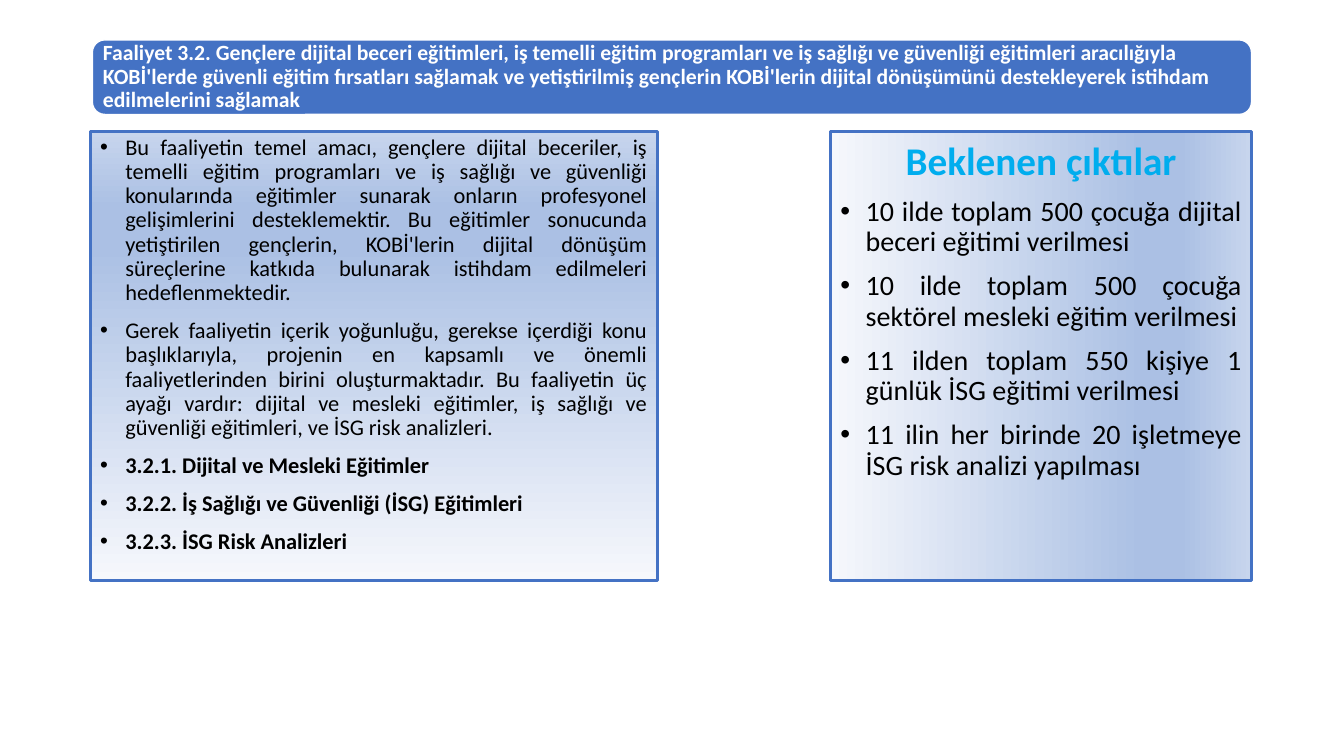
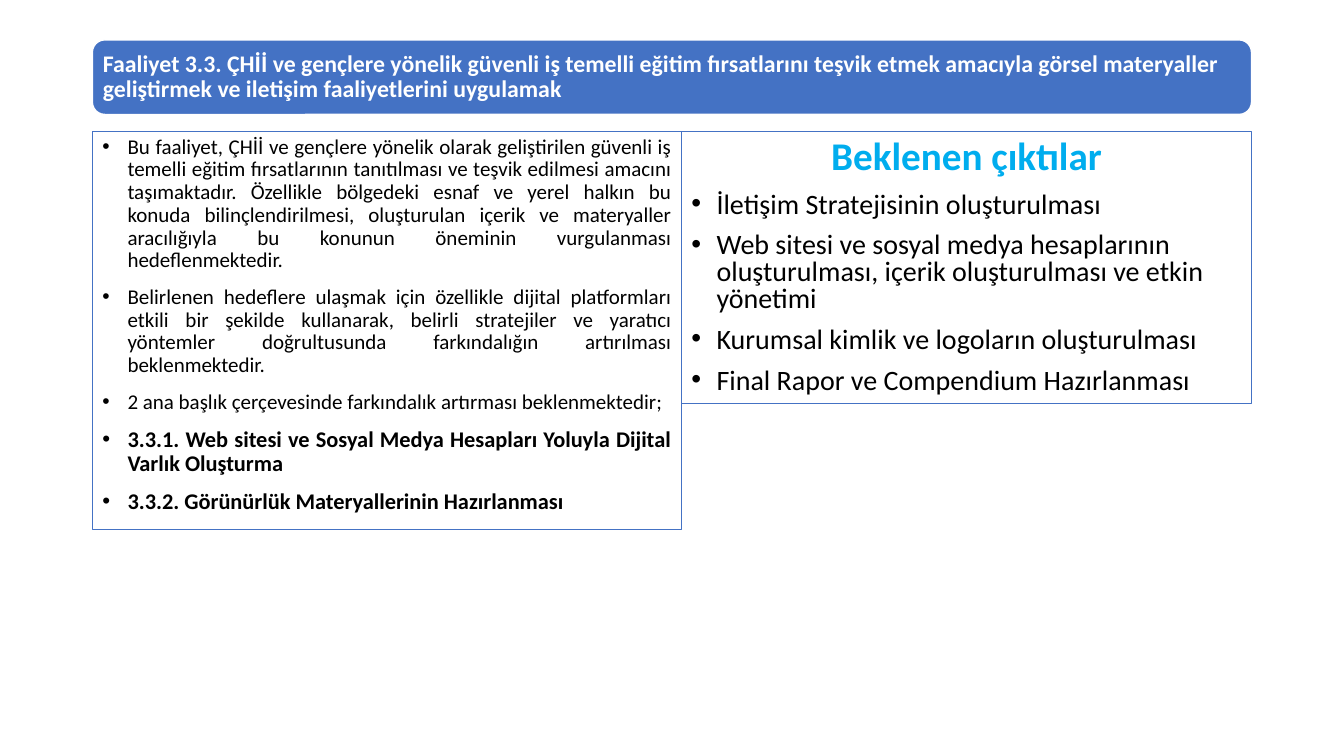
from copy import deepcopy
from dataclasses import dataclass

from lxml import etree
from pptx import Presentation
from pptx import util as u
from pptx.dml.color import RGBColor
from pptx.enum import shapes, text
from pptx.oxml import ns

PX = 9525


@dataclass(frozen=True)
class Theme:
    font: str = "Calibri"
    blue: str = "4472C4"
    white: str = "FFFFFF"
    black: str = "000000"
    cyan: str = "00ADEE"
    stops: tuple = ((0, "F6F8FC"), (0.74, "ABC0E4"), (0.83, "ABC0E4"), (1, "C7D5ED"))
    heading: int = 28
    output: int = 20
    indent: int = 24
    gap: int = 10


THEME = Theme()
BANNER = (88, 38, 1104, 71)
JUSTIFY, LEFT, CENTER = text.PP_ALIGN.JUSTIFY, text.PP_ALIGN.LEFT, text.PP_ALIGN.CENTER


def color(value):
    return RGBColor.from_string(value)


def emu(box):
    return [u.Emu(length * PX) for length in box]


def add_box(slide, kind, box, line_color, line_width):
    shape = slide.shapes.add_shape(kind, *emu(box))
    shape.shadow.inherit = False
    shape.line.color.rgb = color(line_color)
    shape.line.width = u.Pt(line_width)
    return shape


def fill_gradient(shape, angle):
    shape.fill.gradient()
    shape.fill.gradient_angle = angle
    stop_list = shape._element.spPr.find(".//" + ns.qn("a:gsLst"))
    while len(stop_list) < len(THEME.stops):
        stop_list.append(deepcopy(stop_list[0]))
    for stop, (position, value) in zip(shape.fill.gradient_stops, THEME.stops):
        stop.position = position
        stop.color.rgb = color(value)


def add_bullet(paragraph):
    properties = paragraph._p.get_or_add_pPr()
    properties.set("marL", str(THEME.indent * PX))
    properties.set("indent", str(-THEME.indent * PX))
    etree.SubElement(properties, ns.qn("a:buFont")).set("typeface", "Arial")
    etree.SubElement(properties, ns.qn("a:buChar")).set("char", "•")


def write(paragraph, words, size, value, bold=False, align=LEFT, spacing=0.9, before=0, bullet=False):
    paragraph.text = words
    if bullet:
        add_bullet(paragraph)
    paragraph.alignment = align
    paragraph.line_spacing = spacing
    paragraph.space_before = u.Pt(before)
    font = paragraph.font
    font.name, font.size, font.bold = THEME.font, u.Pt(size), bold
    font.color.rgb = color(value)


def add_banner(slide, box, words, size):
    banner = add_box(slide, shapes.MSO_SHAPE.ROUNDED_RECTANGLE, box, THEME.white, 1)
    banner.fill.solid()
    banner.fill.fore_color.rgb = color(THEME.blue)
    left, top, width, height = box
    title = slide.shapes.title
    title.left, title.top, title.width, title.height = emu((left + 3, top + 3, width - 6, height - 6))
    banner._element.addnext(title._element)
    frame = title.text_frame
    frame.word_wrap = True
    frame.auto_size = text.MSO_AUTO_SIZE.NONE
    frame.vertical_anchor = text.MSO_ANCHOR.MIDDLE
    frame.margin_left = frame.margin_right = frame.margin_top = frame.margin_bottom = u.Emu(7 * PX)
    write(frame.paragraphs[0], words, size, THEME.white, bold=True)


def add_panel(slide, box, line_width, angle):
    panel = add_box(slide, shapes.MSO_SHAPE.RECTANGLE, box, THEME.blue, line_width)
    if angle is None:
        panel.fill.background()
    else:
        fill_gradient(panel, angle)
    frame = panel.text_frame
    frame.word_wrap = True
    frame.vertical_anchor = text.MSO_ANCHOR.TOP
    return frame


def add_description(slide, box, line_width, angle, size, sentences, subheads):
    frame = add_panel(slide, box, line_width, angle)
    entries = [(words, size, False) for words in sentences] + [(words, 16, True) for words in subheads]
    for index, (words, points, bold) in enumerate(entries):
        paragraph = frame.add_paragraph() if index else frame.paragraphs[0]
        write(paragraph, words, points, THEME.black, bold, JUSTIFY,
              before=THEME.gap if index else 0, bullet=True)


def add_outputs(slide, box, line_width, angle, align, heading_spacing, spacing, outputs):
    frame = add_panel(slide, box, line_width, angle)
    write(frame.paragraphs[0], "Beklenen çıktılar", THEME.heading, THEME.cyan, True, CENTER, heading_spacing)
    for words in outputs:
        write(frame.add_paragraph(), words, THEME.output, THEME.black, False, align, spacing,
              THEME.gap, bullet=True)


def add_activity(presentation, title, title_size, line_width, description, outputs):
    slide = presentation.slides.add_slide(presentation.slide_layouts[5])
    add_banner(slide, BANNER, title, title_size)
    add_description(slide, line_width=line_width, **description)
    add_outputs(slide, line_width=line_width, **outputs)


ACTIVITIES = (
    dict(
        title="Faaliyet 3.2. Gençlere dijital beceri eğitimleri, iş temelli eğitim programları ve iş sağlığı ve "
              "güvenliği eğitimleri aracılığıyla KOBİ'lerde güvenli eğitim fırsatları sağlamak ve yetiştirilmiş "
              "gençlerin KOBİ'lerin dijital dönüşümünü destekleyerek istihdam edilmelerini sağlamak",
        title_size=15.5,
        line_width=2,
        description=dict(
            box=(86, 125, 540, 428), angle=90, size=16,
            sentences=(
                "Bu faaliyetin temel amacı, gençlere dijital beceriler, iş temelli eğitim programları ve iş sağlığı "
                "ve güvenliği konularında eğitimler sunarak onların profesyonel gelişimlerini desteklemektir. Bu "
                "eğitimler sonucunda yetiştirilen gençlerin, KOBİ'lerin dijital dönüşüm süreçlerine katkıda "
                "bulunarak istihdam edilmeleri hedeflenmektedir.",
                "Gerek faaliyetin içerik yoğunluğu, gerekse içerdiği konu başlıklarıyla, projenin en kapsamlı ve "
                "önemli faaliyetlerinden birini oluşturmaktadır. Bu faaliyetin üç ayağı vardır: dijital ve mesleki "
                "eğitimler, iş sağlığı ve güvenliği eğitimleri, ve İSG risk analizleri.",
            ),
            subheads=(
                "3.2.1. Dijital ve Mesleki Eğitimler",
                "3.2.2. İş Sağlığı ve Güvenliği (İSG) Eğitimleri",
                "3.2.3. İSG Risk Analizleri",
            ),
        ),
        outputs=dict(
            box=(791, 125, 401, 428), angle=0, align=JUSTIFY, heading_spacing=1.0, spacing=0.9,
            outputs=(
                "10 ilde toplam 500 çocuğa dijital beceri eğitimi verilmesi",
                "10 ilde toplam 500 çocuğa sektörel mesleki eğitim verilmesi",
                "11 ilden toplam 550 kişiye 1 günlük İSG eğitimi verilmesi",
                "11 ilin her birinde 20 işletmeye İSG risk analizi yapılması",
            ),
        ),
    ),
    dict(
        title="Faaliyet 3.3. ÇHİİ ve gençlere yönelik güvenli iş temelli eğitim fırsatlarını teşvik etmek amacıyla "
              "görsel materyaller geliştirmek ve iletişim faaliyetlerini uygulamak",
        title_size=17,
        line_width=0.75,
        description=dict(
            box=(88, 125, 561, 379), angle=None, size=15,
            sentences=(
                "Bu faaliyet, ÇHİİ ve gençlere yönelik olarak geliştirilen güvenli iş temelli eğitim fırsatlarının "
                "tanıtılması ve teşvik edilmesi amacını taşımaktadır. Özellikle bölgedeki esnaf ve yerel halkın bu "
                "konuda bilinçlendirilmesi, oluşturulan içerik ve materyaller aracılığıyla bu konunun öneminin "
                "vurgulanması hedeflenmektedir.",
                "Belirlenen hedeflere ulaşmak için özellikle dijital platformları etkili bir şekilde kullanarak, "
                "belirli stratejiler ve yaratıcı yöntemler doğrultusunda farkındalığın artırılması beklenmektedir.",
                "2 ana başlık çerçevesinde farkındalık artırması beklenmektedir;",
            ),
            subheads=(
                "3.3.1. Web sitesi ve Sosyal Medya Hesapları Yoluyla Dijital Varlık Oluşturma",
                "3.3.2. Görünürlük Materyallerinin Hazırlanması",
            ),
        ),
        outputs=dict(
            box=(649, 125, 543, 259), angle=None, align=LEFT, heading_spacing=0.9, spacing=0.8,
            outputs=(
                "İletişim Stratejisinin oluşturulması",
                "Web sitesi ve sosyal medya hesaplarının oluşturulması, içerik oluşturulması ve etkin yönetimi",
                "Kurumsal kimlik ve logoların oluşturulması",
                "Final Rapor ve Compendium Hazırlanması",
            ),
        ),
    ),
)


def main():
    presentation = Presentation()
    presentation.slide_width, presentation.slide_height = emu((1280, 720))
    for activity in ACTIVITIES:
        add_activity(presentation, **activity)
    presentation.save("out.pptx")


if __name__ == "__main__":
    main()
